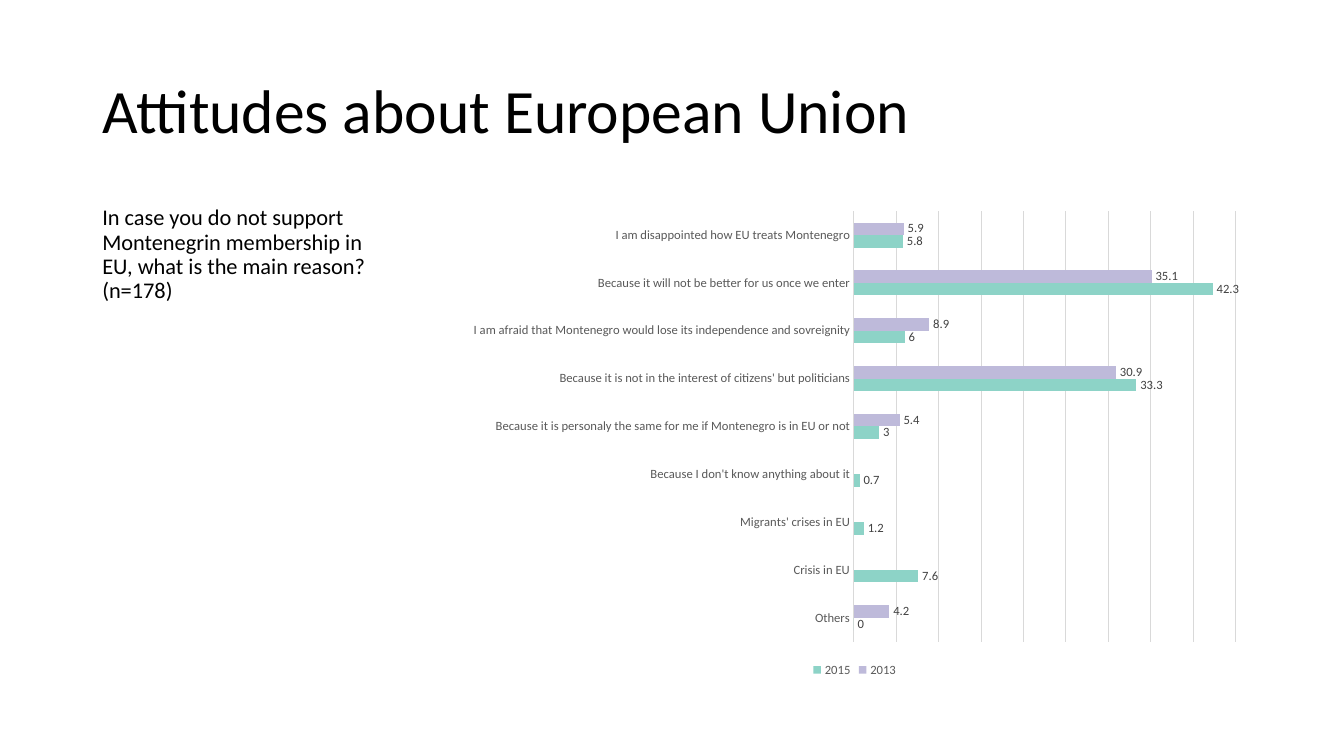
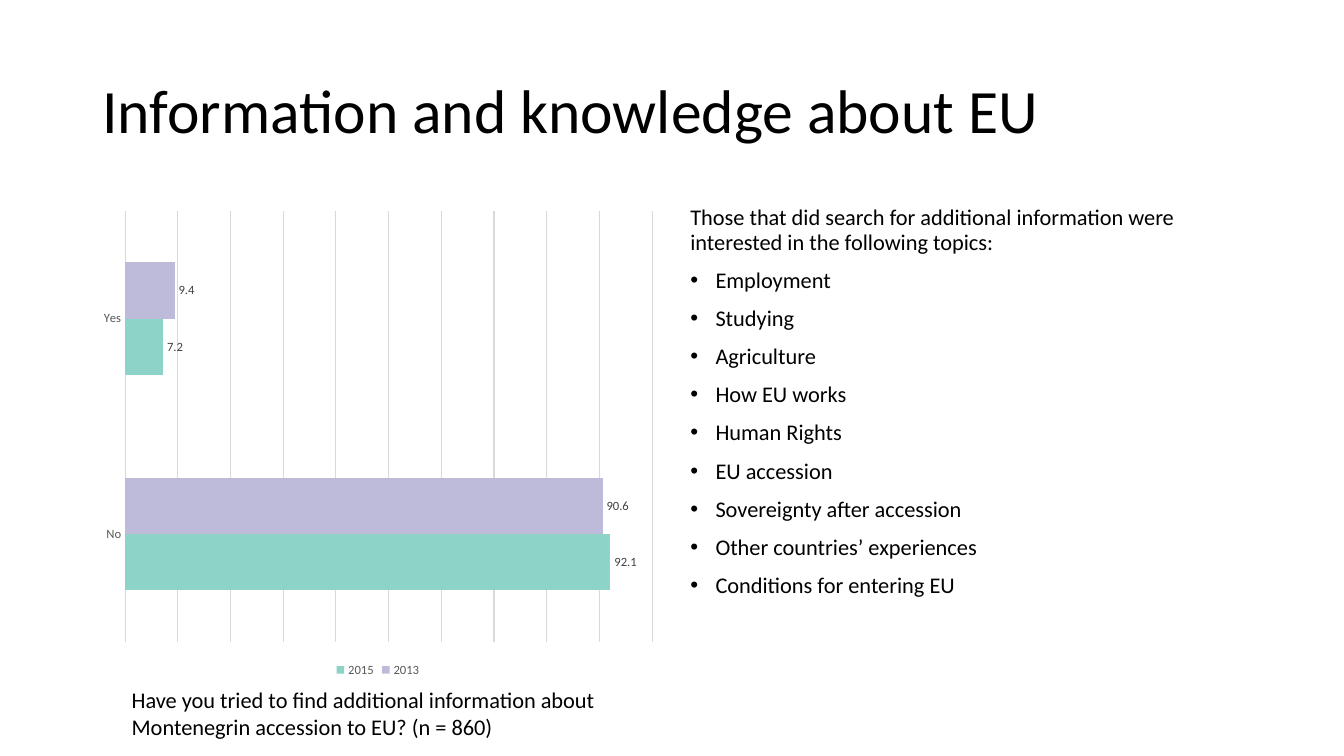
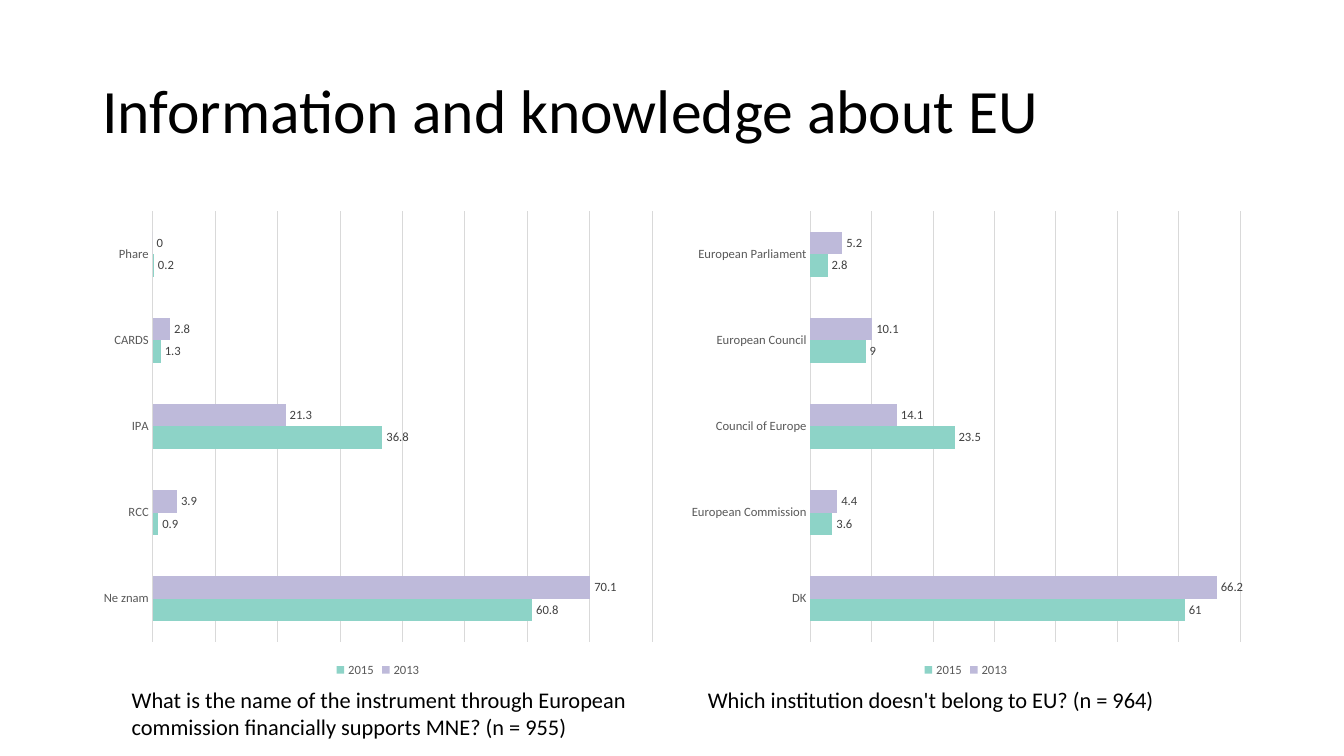
from lxml import etree
from pptx import Presentation
from pptx import util as u
from pptx.chart import data as chart_data
from pptx.dml.color import RGBColor
from pptx.enum import chart as ce, text as te
from pptx.oxml import ns

Pt = u.Pt

# Shared look
FONT = "Calibri"
BLACK = RGBColor(0x00, 0x00, 0x00)
AXIS_GREY = RGBColor(0x59, 0x59, 0x59)
LABEL_GREY = RGBColor(0x40, 0x40, 0x40)
GRID_GREY = RGBColor(0xD9, 0xD9, 0xD9)
YEAR_COLOURS = {
    "2013": RGBColor(0xBE, 0xBA, 0xDA),
    "2015": RGBColor(0x8D, 0xD3, 0xC7),
}

# Shared layout, in points
LEFT, CONTENT_WIDTH = 66, 828
TITLE_TOP, TITLE_HEIGHT = 28.75, 104.4
CONTENT_TOP, CONTENT_HEIGHT = 144, 342.7
HALF_WIDTH = 408
RIGHT_LEFT = LEFT + CONTENT_WIDTH - HALF_WIDTH
CAPTION_TOP = CONTENT_TOP + CONTENT_HEIGHT
CAPTION_LEFT = 87
BODY_SIZE, BULLET_INDENT = 16, 18


def set_font(font, size, colour):
    font.name = FONT
    font.size = Pt(size)
    font.color.rgb = colour


def add_frame(slide, left, top, width, height):
    frame = slide.shapes.add_textbox(
        Pt(left), Pt(top), Pt(width), Pt(height)).text_frame
    frame.word_wrap = True
    return frame


def add_run(paragraph, words, size=BODY_SIZE):
    run = paragraph.add_run()
    run.text = words
    set_font(run.font, size, BLACK)


def add_bullet(paragraph):
    props = paragraph._p.get_or_add_pPr()
    props.set("marL", str(Pt(BULLET_INDENT)))
    props.set("indent", str(-Pt(BULLET_INDENT)))
    etree.SubElement(props, ns.qn("a:buFont")).set("typeface", "Arial")
    etree.SubElement(props, ns.qn("a:buChar")).set("char", "•")


def add_titled_slide(prs, title):
    slide = prs.slides.add_slide(prs.slide_layouts[6])
    frame = add_frame(slide, LEFT, TITLE_TOP, CONTENT_WIDTH, TITLE_HEIGHT)
    frame.vertical_anchor = te.MSO_ANCHOR.MIDDLE
    heading = frame.paragraphs[0]
    heading.line_spacing = 0.9
    add_run(heading, title, 44)
    return slide


def add_body(slide, left, width, intro, topics=()):
    frame = add_frame(slide, left, CONTENT_TOP, width, CONTENT_HEIGHT)
    opening = frame.paragraphs[0]
    opening.line_spacing = 0.9
    add_run(opening, intro)
    for topic in topics:
        item = frame.add_paragraph()
        add_bullet(item)
        item.line_spacing = 0.9
        item.space_before = Pt(10)
        add_run(item, topic)


def add_caption(slide, left, width, height, question):
    frame = add_frame(slide, left, CAPTION_TOP, width, height)
    frame.auto_size = te.MSO_AUTO_SIZE.SHAPE_TO_FIT_TEXT
    add_run(frame.paragraphs[0], question)


def add_year_chart(slide, left, width, answers):
    """Draw rows of (answer, 2013 value, 2015 value) as paired bars."""
    names, *year_values = zip(*answers)
    results = chart_data.CategoryChartData()
    results.categories = names
    for year, values in zip(YEAR_COLOURS, year_values):
        results.add_series(year, values)
    chart = slide.shapes.add_chart(
        ce.XL_CHART_TYPE.BAR_CLUSTERED, Pt(left), Pt(CONTENT_TOP),
        Pt(width), Pt(CONTENT_HEIGHT), results).chart
    chart.has_title = False
    set_font(chart.font, 10, BLACK)

    # Legend
    chart.has_legend = True
    chart.legend.position = ce.XL_LEGEND_POSITION.BOTTOM
    chart.legend.include_in_layout = False
    set_font(chart.legend.font, 9, AXIS_GREY)

    # Axes
    answer_axis, value_axis = chart.category_axis, chart.value_axis
    answer_axis.reverse_order = True
    answer_axis.major_tick_mark = ce.XL_TICK_MARK.NONE
    answer_axis.minor_tick_mark = ce.XL_TICK_MARK.NONE
    set_font(answer_axis.tick_labels.font, 9, AXIS_GREY)
    value_axis.visible = False
    value_axis.has_major_gridlines = True
    for line in (answer_axis.format.line,
                 value_axis.major_gridlines.format.line):
        line.color.rgb = GRID_GREY
        line.width = Pt(0.75)

    # Bars and their values
    bars = chart.plots[0]
    bars.gap_width = 182
    bars.vary_by_categories = False
    for series in bars.series:
        series.format.fill.solid()
        series.format.fill.fore_color.rgb = YEAR_COLOURS[series.name]
        labels = series.data_labels
        labels.show_value = True
        labels.position = ce.XL_LABEL_POSITION.OUTSIDE_END
        set_font(labels.font, 9, LABEL_GREY)


def build_attitudes(prs):
    slide = add_titled_slide(prs, "Attitudes about European Union")
    add_body(slide, LEFT, 224,
             "In case you do not support Montenegrin membership in EU, "
             "what is the main reason? (n=178)")
    add_year_chart(slide, 327, 567, [
        ("I am disappointed how EU treats Montenegro", 5.9, 5.8),
        ("Because it will not be better for us once we enter", 35.1, 42.3),
        ("I am afraid that Montenegro would lose its independence "
         "and sovreignity", 8.9, 6),
        ("Because it is not in the interest of citizens' but politicians",
         30.9, 33.3),
        ("Because it is personaly the same for me if Montenegro is in EU "
         "or not", 5.4, 3),
        ("Because I don't know anything about it", None, 0.7),
        ("Migrants' crises in EU", None, 1.2),
        ("Crisis in EU", None, 7.6),
        ("Others", 4.2, 0),
    ])


def build_information_search(prs):
    slide = add_titled_slide(prs, "Information and knowledge about EU")
    add_caption(slide, CAPTION_LEFT, 399, 46,
                "Have you tried to find additional information about "
                "Montenegrin accession to EU? (n = 860)")
    add_body(slide, RIGHT_LEFT, HALF_WIDTH,
             "Those that did search for additional information were "
             "interested in the following topics:",
             ["Employment", "Studying", "Agriculture", "How EU works",
              "Human Rights", "EU accession", "Sovereignty after accession",
              "Other countries’ experiences", "Conditions for entering EU"])
    add_year_chart(slide, LEFT, HALF_WIDTH,
                   [("Yes", 9.4, 7.2), ("No", 90.6, 92.1)])


def build_knowledge(prs):
    slide = add_titled_slide(prs, "Information and knowledge about EU")
    add_caption(slide, CAPTION_LEFT, 427, 46,
                "What is the name of the instrument through European "
                "commission financially supports MNE? (n = 955)")
    add_caption(slide, 498.5, 422, 26.6,
                "Which institution doesn't belong to EU? (n = 964)")
    add_year_chart(slide, LEFT, HALF_WIDTH, [
        ("Phare", 0, 0.2),
        ("CARDS", 2.8, 1.3),
        ("IPA", 21.3, 36.8),
        ("RCC", 3.9, 0.9),
        ("Ne znam", 70.1, 60.8),
    ])
    add_year_chart(slide, RIGHT_LEFT, HALF_WIDTH, [
        ("European Parliament", 5.2, 2.8),
        ("European Council", 10.1, 9),
        ("Council of Europe", 14.1, 23.5),
        ("European Commission", 4.4, 3.6),
        ("DK", 66.2, 61),
    ])


def main():
    prs = Presentation()
    prs.slide_width, prs.slide_height = Pt(960), Pt(540)
    build_attitudes(prs)
    build_information_search(prs)
    build_knowledge(prs)
    prs.save("out.pptx")


if __name__ == "__main__":
    main()
